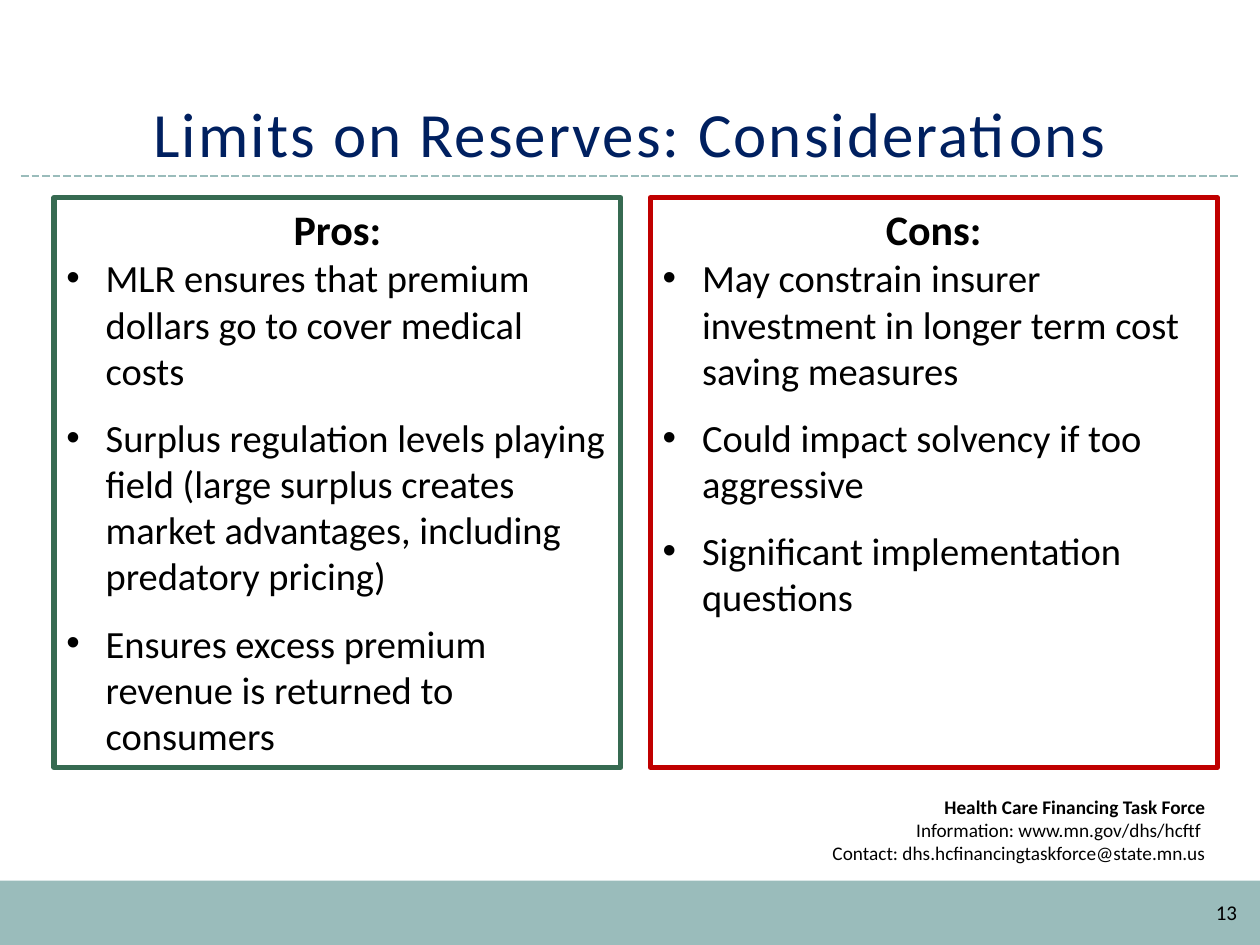
from dataclasses import dataclass

import pptx
import pptx.dml.color
import pptx.enum.dml
import pptx.enum.shapes
import pptx.enum.text
import pptx.oxml.ns
import pptx.util
from lxml import etree

Pt = pptx.util.Pt
Align = pptx.enum.text.PP_ALIGN
Anchor = pptx.enum.text.MSO_ANCHOR
qn = pptx.oxml.ns.qn


@dataclass(frozen=True)
class Theme:
    font: str = "Calibri"
    bullet_font: str = "Arial"
    white: str = "FFFFFF"
    text: str = "000000"
    title: str = "002060"
    band: str = "9ABCBB"
    pros: str = "366A51"
    cons: str = "C00000"
    title_size: int = 36
    heading_size: int = 24
    body_size: int = 22
    number_size: int = 12
    contact_size: int = 11


THEME = Theme()
HANGING = Pt(22.5)


def color(value):
    return pptx.dml.color.RGBColor.from_string(value)


def apply(target, values):
    for name, value in values.items():
        setattr(target, name, value)


def add_rectangle(page, area, fill, outline=None):
    box = page.shapes.add_shape(
        pptx.enum.shapes.MSO_SHAPE.RECTANGLE, *(Pt(length) for length in area))
    box.shadow.inherit = False
    box.fill.solid()
    box.fill.fore_color.rgb = color(fill)
    if outline:
        box.line.color.rgb = color(outline)
        box.line.width = Pt(3)
        etree.SubElement(box.line._get_or_add_ln(), qn("a:round"))
    else:
        box.line.fill.background()
    return box


def add_text_box(page, area, anchor):
    box = page.shapes.add_textbox(*(Pt(length) for length in area))
    apply(box.text_frame, {"word_wrap": True, "vertical_anchor": anchor})
    return box


def add_rule(page, left, right, top):
    rule = page.shapes.add_connector(
        pptx.enum.shapes.MSO_CONNECTOR.STRAIGHT, Pt(left), Pt(top), Pt(right), Pt(top))
    rule.line.color.rgb = color(THEME.band)
    apply(rule.line, {"width": Pt(1.5), "dash_style": pptx.enum.dml.MSO_LINE.SQUARE_DOT})
    etree.SubElement(rule._element.spPr, qn("a:effectLst"))


def add_paragraph(box, first=False, **values):
    frame = box.text_frame
    para = frame.paragraphs[0] if first else frame.add_paragraph()
    apply(para, values)
    return para


def add_span(para, text, size, shade=THEME.text, bold=False):
    span = para.add_run()
    span.text = text
    apply(span.font, {"name": THEME.font, "size": Pt(size), "bold": bold})
    span.font.color.rgb = color(shade)
    return span


def add_bullet(para):
    properties = para._p.get_or_add_pPr()
    properties.set("marL", str(HANGING))
    properties.set("indent", str(-HANGING))
    etree.SubElement(properties, qn("a:buFont"), typeface=THEME.bullet_font)
    etree.SubElement(properties, qn("a:buChar"), char="•")


def add_title(page, text):
    box = add_text_box(page, (24, 18, 672, 82.8), Anchor.BOTTOM)
    para = add_paragraph(box, first=True, alignment=Align.CENTER, line_spacing=Pt(40))
    span = add_span(para, text, THEME.title_size, THEME.title)
    span._r.get_or_add_rPr().set("spc", "120")


def add_panel(page, left, outline, heading, points):
    box = add_rectangle(page, (left, 113, 324, 325.5), THEME.white, outline)
    apply(box.text_frame, {"word_wrap": True, "vertical_anchor": Anchor.TOP})
    para = add_paragraph(box, first=True, alignment=Align.CENTER)
    add_span(para, heading, THEME.heading_size, bold=True)
    for point in points:
        para = add_paragraph(box, alignment=Align.LEFT, space_after=Pt(12))
        add_bullet(para)
        add_span(para, point, THEME.body_size)


def add_contact(page):
    box = add_rectangle(page, (327, 450.7, 369, 48.2), THEME.white)
    apply(box.text_frame, {"word_wrap": True, "vertical_anchor": Anchor.TOP})
    para = add_paragraph(box, first=True, alignment=Align.RIGHT)
    add_span(para, "Health Care Financing Task Force", THEME.contact_size, bold=True)
    para.add_line_break()
    add_span(para, "Information: www.mn.gov/dhs/hcftf ", THEME.contact_size)
    para = add_paragraph(box, alignment=Align.RIGHT)
    add_span(para, "Contact: dhs.hcfinancingtaskforce@state.mn.us", THEME.contact_size)


def add_page_number(page, number):
    box = add_text_box(page, (672, 507, 42, 28.8), Anchor.MIDDLE)
    para = add_paragraph(box, first=True, alignment=Align.RIGHT)
    add_span(para, number, THEME.number_size)


def main():
    deck = pptx.Presentation()
    apply(deck, {"slide_width": Pt(720), "slide_height": Pt(540)})
    page = deck.slides.add_slide(deck.slide_layouts[6])
    add_rectangle(page, (0, 503.2, 720, 36.8), THEME.band)
    add_rule(page, 12, 708, 100.6)
    add_contact(page)
    add_title(page, "Limits on Reserves: Considerations")
    add_panel(page, 30.8, THEME.pros, "Pros:", [
        "MLR ensures that premium dollars go to cover medical costs",
        "Surplus regulation levels playing field (large surplus creates market "
        "advantages, including predatory pricing)",
        "Ensures excess premium revenue is returned to consumers",
    ])
    add_panel(page, 371.6, THEME.cons, "Cons:", [
        "May constrain insurer investment in longer term cost saving measures",
        "Could impact solvency if too aggressive",
        "Significant implementation questions",
    ])
    add_page_number(page, "13")
    deck.save("out.pptx")


if __name__ == "__main__":
    main()
